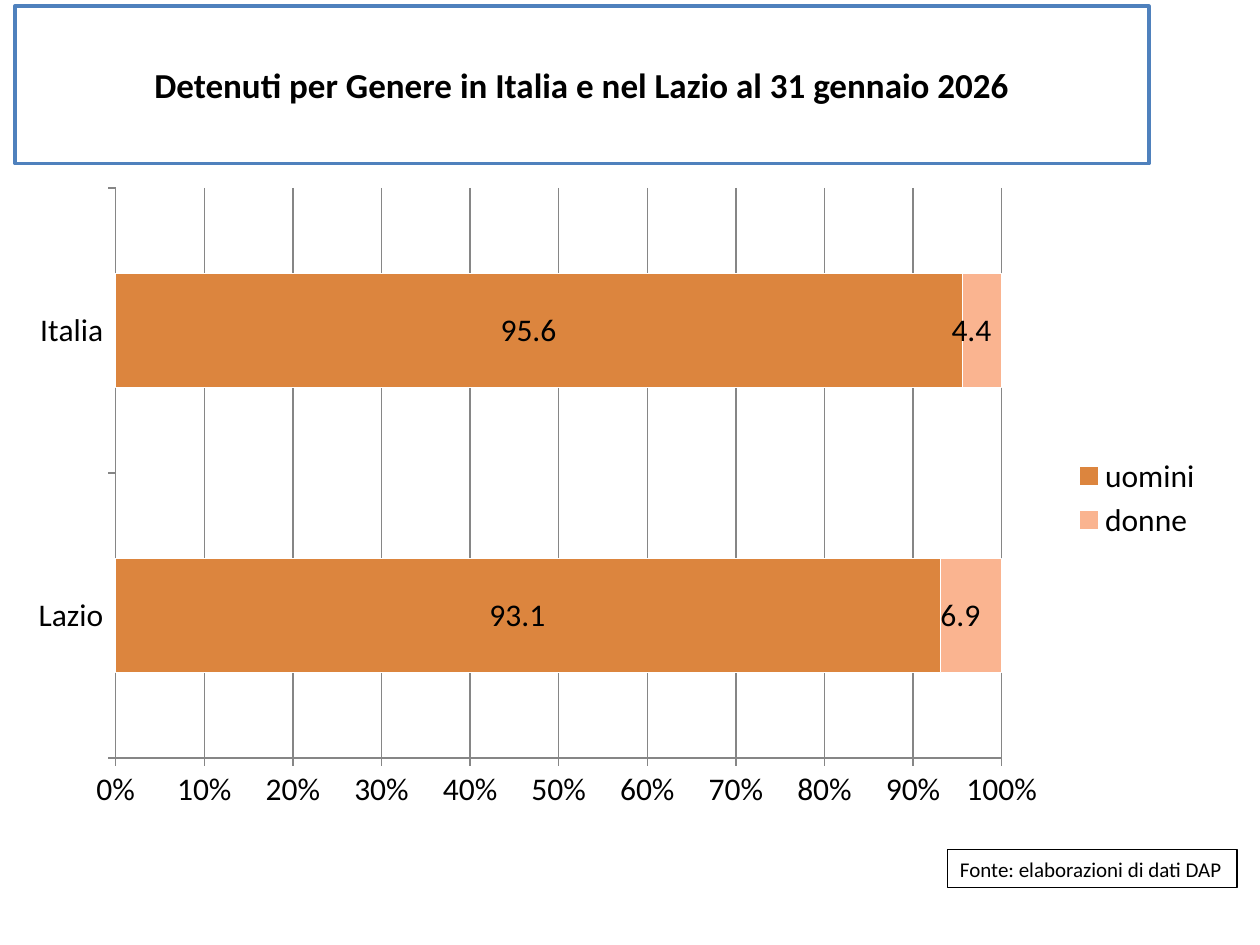
import pptx
import pptx.chart.data
import pptx.dml.color
import pptx.enum.chart
import pptx.enum.shapes
import pptx.enum.text
import pptx.oxml
import pptx.util

Pt = pptx.util.Pt
FONT = "Calibri"
BLACK, WHITE, GREY = "000000", "FFFFFF", "868686"
LABEL_FORMAT = "_-* #,##0.0\\ _€_-"


def color(hex_string):
    return pptx.dml.color.RGBColor.from_string(hex_string)


def add_text_frame(left, top, width, height, line_color, line_width, text, size):
    """Add a white outlined rectangle with one line of text; return its text frame."""
    box = slide.shapes.add_shape(
        pptx.enum.shapes.MSO_SHAPE.RECTANGLE, Pt(left), Pt(top), Pt(width), Pt(height))
    box.shadow.inherit = False
    box.fill.solid()
    box.fill.fore_color.rgb = color(WHITE)
    box.line.color.rgb = color(line_color)
    box.line.width = Pt(line_width)
    frame = box.text_frame
    frame.vertical_anchor = pptx.enum.text.MSO_ANCHOR.MIDDLE
    para = frame.paragraphs[0]
    para.text = text
    para.font.name = FONT
    para.font.size = Pt(size)
    para.font.color.rgb = color(BLACK)
    return frame


deck = pptx.Presentation()
deck.slide_width, deck.slide_height = Pt(720), Pt(540)
slide = deck.slides.add_slide(deck.slide_layouts[6])

# Title
title = add_text_frame(8.5, 3.5, 648, 90, "4F81BD", 2,
                       "Detenuti per Genere in Italia e nel Lazio al 31 gennaio 2026", 20)
title.word_wrap = True
title.paragraphs[0].alignment = pptx.enum.text.PP_ALIGN.CENTER
title.paragraphs[0].font.bold = True

# Source note
source = add_text_frame(541.5, 485.5, 165.5, 21.8, BLACK, 0.75,
                        "Fonte: elaborazioni di dati DAP", 12)
source.word_wrap = False
source.paragraphs[0].alignment = pptx.enum.text.PP_ALIGN.LEFT

# Chart of shares by gender
data = pptx.chart.data.CategoryChartData()
data.categories = ["Lazio", "Italia"]
data.add_series("uomini", [93.1, 95.6])
data.add_series("donne", [6.9, 4.4])
chart = slide.shapes.add_chart(
    pptx.enum.chart.XL_CHART_TYPE.BAR_STACKED_100,
    Pt(8.5), Pt(100), Pt(686), Pt(369.5), data).chart
chart.has_title = False
chart.font.name = FONT
chart.font.size = Pt(18)
chart.font.color.rgb = color(BLACK)
chart.has_legend = True
chart.legend.position = pptx.enum.chart.XL_LEGEND_POSITION.RIGHT
chart.legend.include_in_layout = False

plot = chart.plots[0]
plot.gap_width = 150
plot.overlap = 100
plot.vary_by_categories = False
for series, fill in zip(plot.series, ["DC853E", "FAB490"]):
    series.format.fill.solid()
    series.format.fill.fore_color.rgb = color(fill)
    series.format.line.color.rgb = color(WHITE)
    series.format.line.width = Pt(0.75)
    labels = series.data_labels
    labels.show_value = True
    labels.position = pptx.enum.chart.XL_LABEL_POSITION.CENTER
    labels.number_format = LABEL_FORMAT
    labels.number_format_is_linked = False

for axis in (chart.category_axis, chart.value_axis):
    axis.major_tick_mark = pptx.enum.chart.XL_TICK_MARK.OUTSIDE
    axis.minor_tick_mark = pptx.enum.chart.XL_TICK_MARK.NONE
    axis.format.line.color.rgb = color(GREY)
    axis.format.line.width = Pt(0.75)
shares = chart.value_axis
shares.minimum_scale = 0
shares.has_major_gridlines = True
shares.major_gridlines.format.line.color.rgb = color(GREY)
shares.major_gridlines.format.line.width = Pt(0.75)
shares.tick_labels.number_format = "0%"
shares.tick_labels.number_format_is_linked = False

# Fixed place for the plot area, as fractions of the chart
plot_area = chart.plots[0]._element.getparent()
for old_layout in plot_area.findall(pptx.oxml.ns.qn("c:layout")):
    plot_area.remove(old_layout)
plot_area.insert(0, pptx.oxml.parse_xml(
    f'<c:layout {pptx.oxml.ns.nsdecls("c")}><c:manualLayout>'
    '<c:layoutTarget val="inner"/><c:xMode val="edge"/><c:yMode val="edge"/>'
    '<c:x val="0.084"/><c:y val="0.02"/><c:w val="0.738"/><c:h val="0.882"/>'
    '</c:manualLayout></c:layout>'))

deck.save("out.pptx")
